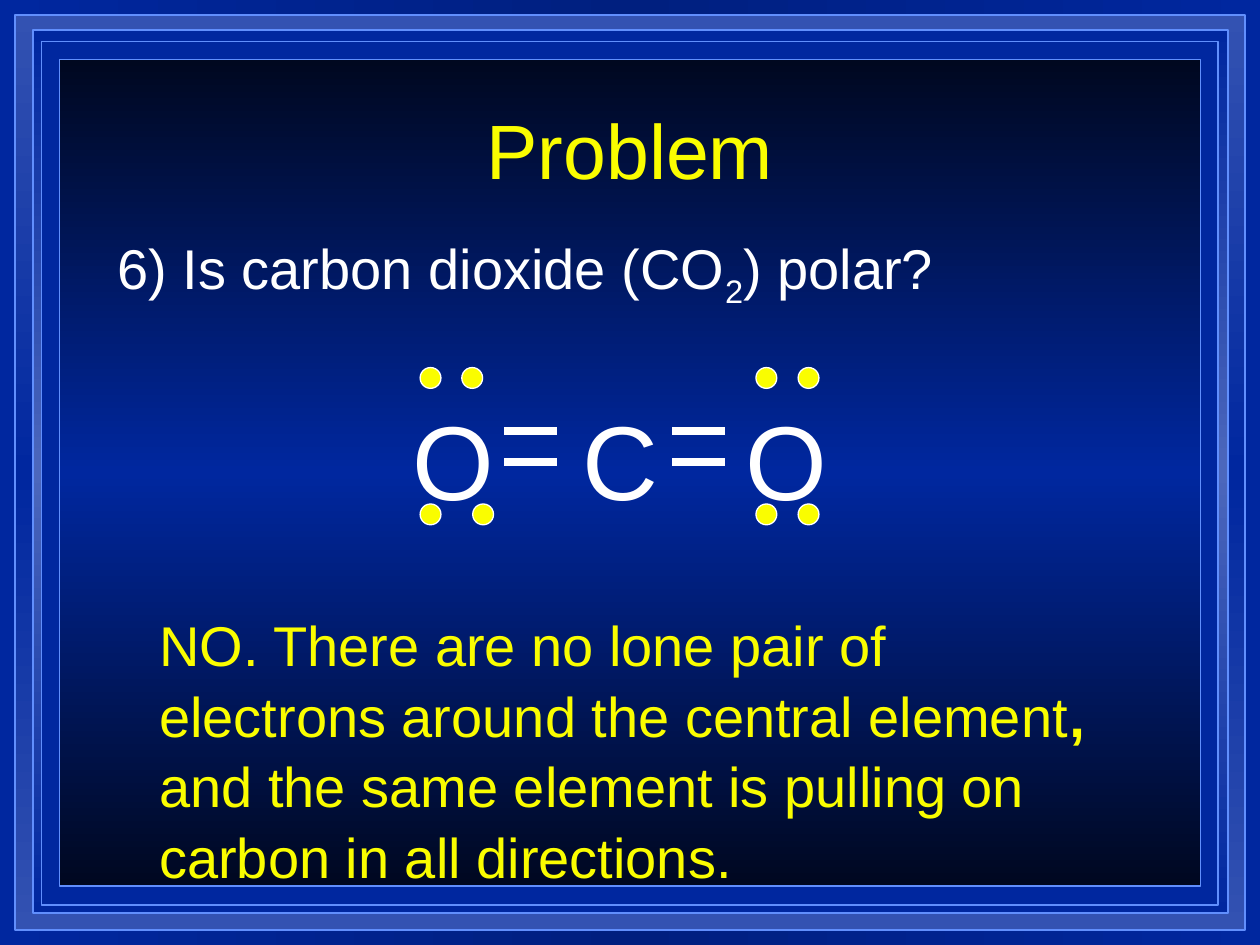
from copy import deepcopy
from pptx import Presentation
from pptx.dml.color import RGBColor
from pptx.enum.shapes import MSO_CONNECTOR, MSO_SHAPE
from pptx.enum.text import MSO_ANCHOR, PP_ALIGN
from pptx.oxml.ns import qn
from pptx.util import Cm, Pt
from lxml.etree import SubElement

hues = {
    "blue": "00279F", "navy": "001F7F", "steel": "3352B2", "pale": "4C67BC",
    "night": "000820", "edge": "618FFD", "yellow": "FAFD00", "white": "FFFFFF",
}
tint = {name: RGBColor.from_string(code) for name, code in hues.items()}

deck = Presentation()
deck.slide_width, deck.slide_height = Cm(25.4), Cm(19.05)
slide = deck.slides.add_slide(deck.slide_layouts[6])
shapes = slide.shapes


def blend(fill, outer, inner, angle):
    fill.gradient()
    fill.gradient_angle = angle
    first, last = fill.gradient_stops
    first.color.rgb, last.color.rgb = tint[outer], tint[inner]
    first.position, last.position = 0, 0.5


def write(place, parts, size, color, align=PP_ALIGN.LEFT):
    box = shapes.add_textbox(*map(Cm, place))
    frame = box.text_frame
    frame.word_wrap = True
    para = frame.paragraphs[0]
    para.alignment = align
    para.line_spacing = 1.05
    para.font.name, para.font.size = "Arial", Pt(size)
    para.font.color.rgb = tint[color]
    for part in parts:
        para.add_run().text = part
    return frame, para


blend(slide.background.fill, "blue", "navy", 0)
frames = [
    (0.3, 0.3, 24.8, 18.45, "steel", "blue"),
    (0.66, 0.61, 24.1, 17.8, "blue", "pale"),
    (0.84, 0.84, 23.72, 17.4, "blue", "blue"),
    (1.2, 1.2, 23, 16.66, "night", "blue"),
]
for *place, outer, inner in frames:
    panel = shapes.add_shape(MSO_SHAPE.RECTANGLE, *map(Cm, place))
    panel.shadow.inherit = False
    panel.line.color.rgb, panel.line.width = tint["edge"], Pt(1)
    if outer == inner:
        panel.fill.solid()
        panel.fill.fore_color.rgb = tint[outer]
    else:
        blend(panel.fill, outer, inner, 90)

for stops in slide.element.iter(qn("a:gsLst")):
    end = deepcopy(stops[0])
    end.set("pos", "100000")
    stops.append(end)

title, para = write((1.9, 1.9, 21.6, 2.12), ["Problem"], 44, "yellow", PP_ALIGN.CENTER)
title.vertical_anchor = MSO_ANCHOR.MIDDLE

body, para = write((2.12, 4.5, 21.38, 4), ["6) Is carbon dioxide (CO", "2", ") polar?"], 32, "white")
para.runs[1].font._element.set("baseline", "-25000")
props = para._p.get_or_add_pPr()
props.set("marL", str(Cm(0.95)))
props.set("indent", str(-Cm(0.95)))

reply, para = write((2.96, 12.12, 19.26, 5.66), [
    "NO. There are no lone pair of electrons around the central element",
    ", ",
    "and the same element is pulling on carbon in all directions.",
], 32, "yellow")
para.runs[1].font.bold = True

atoms, para = write((6.15, 7.72, 12.7, 2.8), "O C O", 60, "white", PP_ALIGN.CENTER)
for gap in para.runs[1::2]:
    gap.font._element.set("spc", "3334")

for left in (10.16, 13.55):
    for top in (8.68, 9.32):
        bond = shapes.add_connector(
            MSO_CONNECTOR.STRAIGHT, Cm(left + 1.06), Cm(top), Cm(left), Cm(top))
        bond.line.color.rgb, bond.line.width = tint["white"], Pt(4.5)
        SubElement(bond._element.spPr, qn("a:effectLst"))

pairs = [(7.41, 8.47, 9.31), (7.41, 15.24, 16.09), (10.16, 15.24, 16.09), (10.16, 8.47, 9.53)]
for top, *lefts in pairs:
    for left in lefts:
        dot = shapes.add_shape(MSO_SHAPE.OVAL, Cm(left), Cm(top), Cm(0.42), Cm(0.42))
        dot.shadow.inherit = False
        dot.fill.solid()
        dot.fill.fore_color.rgb = tint["yellow"]
        dot.line.color.rgb, dot.line.width = tint["white"], Pt(0.75)

deck.save("out.pptx")
